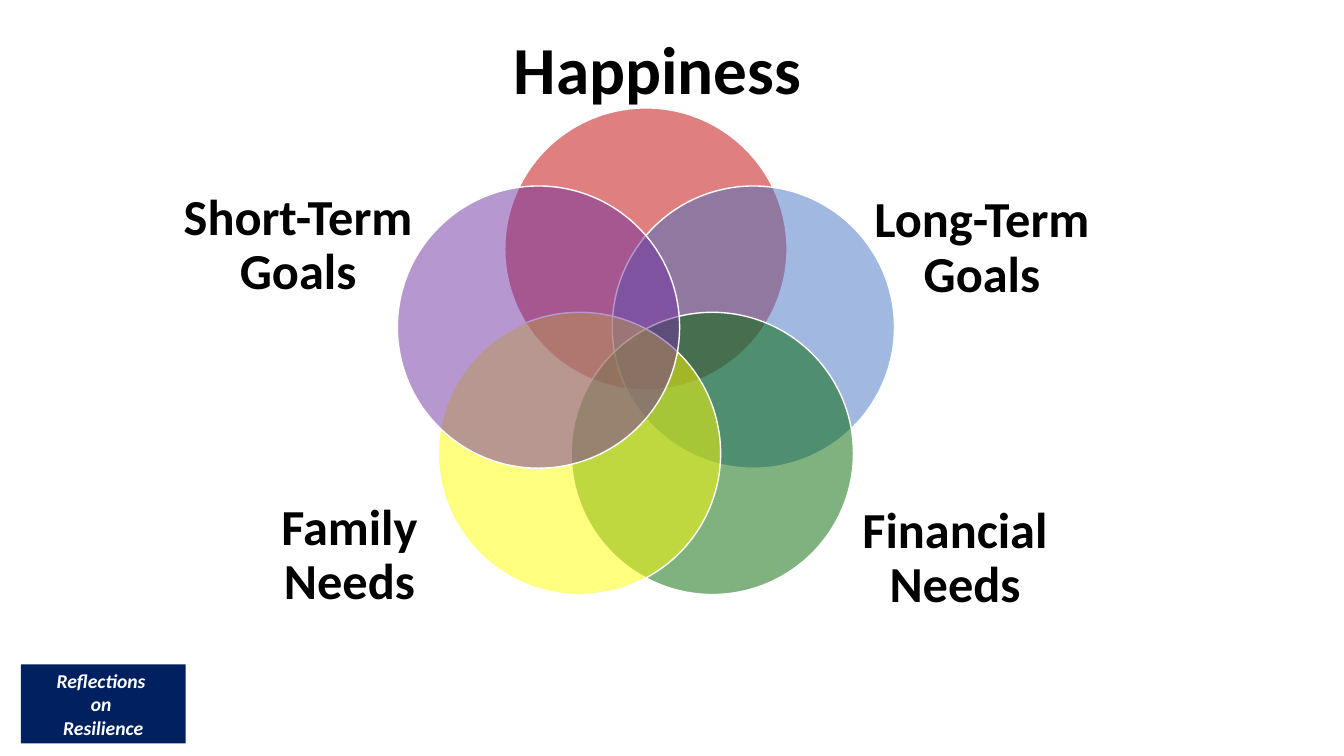
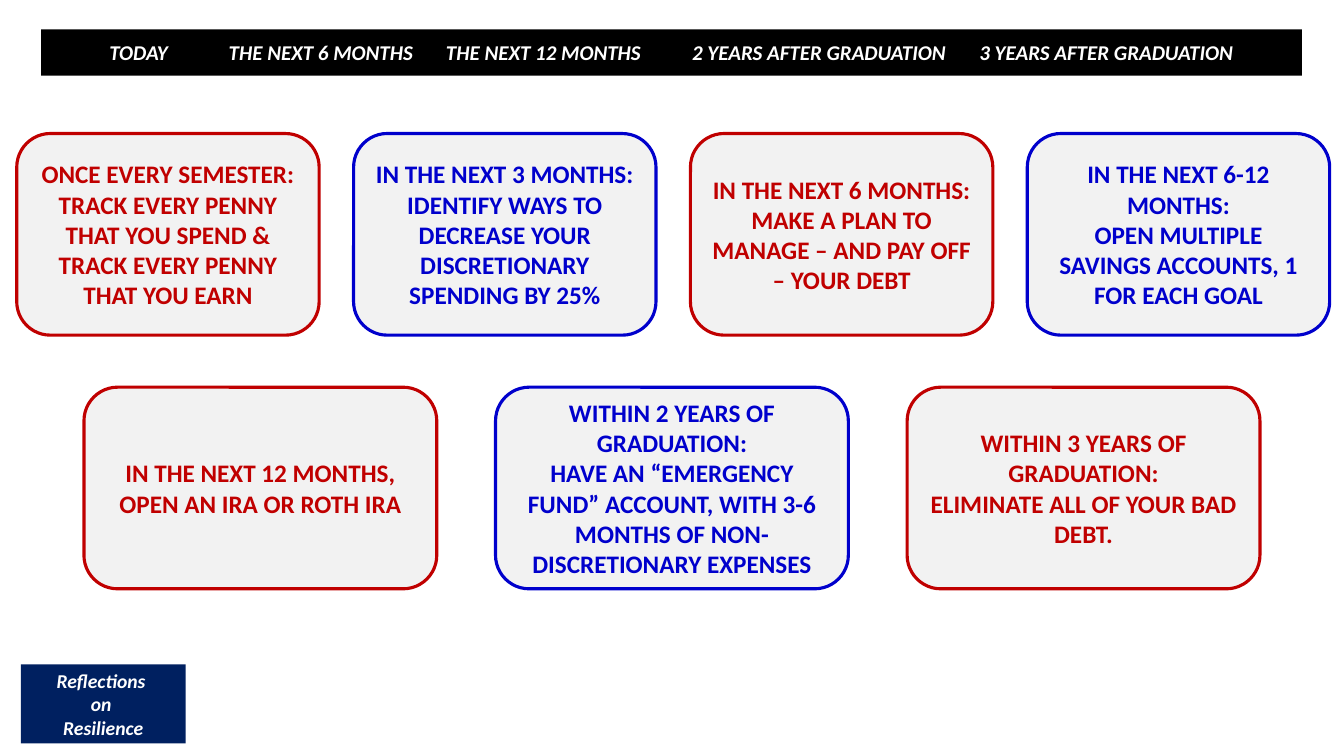
from dataclasses import dataclass
from math import cos, radians, sin

from lxml.etree import SubElement
from pptx import Presentation
from pptx.dml.color import RGBColor
from pptx.enum.shapes import MSO_SHAPE
from pptx.enum.text import MSO_ANCHOR, PP_ALIGN
from pptx.oxml.ns import qn
from pptx.shapes.autoshape import Shape
from pptx.slide import Slide
from pptx.util import Emu, Inches, Pt

# The slide is a grid of 160 columns by 90 rows
COLS, ROWS = 160, 90
CELL = Inches(7.5) / ROWS
FONT = "Calibri"
COLORS = {
    "white": "FFFFFF", "black": "000000", "navy": "002060",
    "card": "F2F2F2", "red": "C00000", "blue": "0000CC",
    "sky": "4472C4", "green": "006600", "yellow": "FFFF00",
    "purple": "7030A0",
}


@dataclass
class Box:
    left: float
    top: float
    width: float
    height: float

    def emu(self) -> list[Emu]:
        return [grid(n) for n in (self.left, self.top, self.width, self.height)]


@dataclass
class Style:
    size: float
    color: str
    italic: bool = False
    spacing: float = 1.0


@dataclass
class Circle:
    color: str
    label: str
    x: float  # centre of the label
    y: float
    width: float
    height: float = 24.5
    size: int = 36


@dataclass
class Row:
    left: float
    top: float
    width: float
    step: float
    cards: list[tuple[str, str]]


FOOTER = Box(2.5, 79.1, 19.6, 9.4)
HEADER = Box(4.9, 3.5, 150.1, 5.5)
CARD_H = 24

# Ring of circles, clockwise from the top
HUB_X, HUB_Y, RING, DIAM = 76.9, 43.1, 13.45, 33.6
CIRCLES = [
    Circle("red", "Happiness", 78.3, 8.6, 39, 15, 48),
    Circle("sky", "Long-Term Goals", 116.9, 29.6, 35),
    Circle("green", "Financial Needs", 113.7, 66.6, 25),
    Circle("yellow", "Family Needs", 41.6, 66.2, 25),
    Circle("purple", "Short-Term Goals", 35.5, 29.3, 35),
]

# Timeline headings with the centre of each, from the left of the bar
TIMES = [
    ("TODAY", 11.6),
    ("THE NEXT 6 MONTHS", 33.3),
    ("THE NEXT 12 MONTHS", 59.8),
    ("2 YEARS AFTER GRADUATION", 92.6),
    ("3 YEARS AFTER GRADUATION", 126.8),
]
CARD_ROWS = [
    Row(2, 15.9, 36, 40.1, [
        ("red", "ONCE EVERY SEMESTER:\nTRACK EVERY PENNY THAT YOU SPEND & "
                "TRACK EVERY PENNY THAT YOU EARN"),
        ("blue", "IN THE NEXT 3 MONTHS:\nIDENTIFY WAYS TO DECREASE YOUR "
                 "DISCRETIONARY SPENDING BY 25%"),
        ("red", "IN THE NEXT 6 MONTHS:\nMAKE A PLAN TO MANAGE – AND PAY OFF "
                "– YOUR DEBT"),
        ("blue", "IN THE NEXT 6-12 MONTHS:\nOPEN MULTIPLE SAVINGS ACCOUNTS, "
                 "1 FOR EACH GOAL"),
    ]),
    Row(10, 46.1, 42, 49, [
        ("red", "IN THE NEXT 12 MONTHS, OPEN AN IRA OR ROTH IRA"),
        ("blue", "WITHIN 2 YEARS OF GRADUATION:\nHAVE AN “EMERGENCY FUND” "
                 "ACCOUNT, WITH 3-6 MONTHS OF NON-DISCRETIONARY EXPENSES"),
        ("red", "WITHIN 3 YEARS OF GRADUATION:\n"
                "ELIMINATE ALL OF YOUR BAD DEBT."),
    ]),
]


def grid(n: float) -> Emu:
    return Emu(round(n * CELL))


def rgb(name: str) -> RGBColor:
    return RGBColor.from_string(COLORS[name])


def write(shape: Shape, text: str, style: Style, inset: bool = True) -> None:
    frame = shape.text_frame
    frame.text = text
    frame.word_wrap = True
    frame.vertical_anchor = MSO_ANCHOR.MIDDLE
    if not inset:
        frame.margin_left = frame.margin_right = 0
        frame.margin_top = frame.margin_bottom = 0
    for para in frame.paragraphs:
        para.alignment = PP_ALIGN.CENTER
        para.line_spacing = style.spacing
        for run in para.runs:
            font = run.font
            font.name, font.size = FONT, Pt(style.size)
            font.bold, font.italic = True, style.italic
            font.color.rgb = rgb(style.color)


def draw(slide: Slide, kind: MSO_SHAPE, box: Box, fill: str,
         line: str = "", weight: float = 1) -> Shape:
    shape = slide.shapes.add_shape(kind, *box.emu())
    shape.shadow.inherit = False
    shape.fill.solid()
    shape.fill.fore_color.rgb = rgb(fill)
    if line:
        shape.line.color.rgb = rgb(line)
        shape.line.width = Pt(weight)
    else:
        shape.line.fill.background()
    return shape


def fade(shape: Shape, share: int) -> None:
    """Set the fill's opacity in percent."""
    color = shape.fill._xPr.find(qn("a:solidFill"))[0]
    SubElement(color, qn("a:alpha")).set("val", str(share * 1000))


def start(deck: Presentation) -> Slide:
    """Add a blank slide with the shared footer."""
    slide = deck.slides.add_slide(deck.slide_layouts[6])
    tag = draw(slide, MSO_SHAPE.RECTANGLE, FOOTER, "navy")
    write(tag, "Reflections \non \nResilience", Style(14, "white", True))
    return slide


def venn(deck: Presentation) -> None:
    slide = start(deck)
    for i, item in enumerate(CIRCLES):
        turn = radians(i * 360 / len(CIRCLES))
        left = HUB_X + RING * sin(turn) - DIAM / 2
        top = HUB_Y - RING * cos(turn) - DIAM / 2
        disc = draw(slide, MSO_SHAPE.OVAL, Box(left, top, DIAM, DIAM),
                    item.color, "white")
        fade(disc, 50)
        area = Box(item.x - item.width / 2, item.y - item.height / 2,
                   item.width, item.height)
        label = slide.shapes.add_textbox(*area.emu())
        write(label, item.label, Style(item.size, "black", spacing=0.9), False)


def plan(deck: Presentation) -> None:
    slide = start(deck)

    # Timeline bar, each heading centred on a tab stop
    bar = draw(slide, MSO_SHAPE.RECTANGLE, HEADER, "black")
    text = "".join("\t" + name for name, _ in TIMES)
    write(bar, text, Style(15, "white", True), False)
    para = bar.text_frame.paragraphs[0]
    para.alignment = PP_ALIGN.LEFT
    tabs = SubElement(para._p.get_or_add_pPr(), qn("a:tabLst"))
    for _, mid in TIMES:
        tab = SubElement(tabs, qn("a:tab"))
        tab.set("pos", str(grid(mid)))
        tab.set("algn", "ctr")

    # Goal cards
    for row in CARD_ROWS:
        for i, (color, goal) in enumerate(row.cards):
            box = Box(row.left + i * row.step, row.top, row.width, CARD_H)
            card = draw(slide, MSO_SHAPE.ROUNDED_RECTANGLE, box,
                        "card", color, 2.25)
            write(card, goal, Style(18, color))


def main() -> None:
    deck = Presentation()
    deck.slide_width, deck.slide_height = grid(COLS), grid(ROWS)
    venn(deck)
    plan(deck)
    deck.save("out.pptx")


if __name__ == "__main__":
    main()
